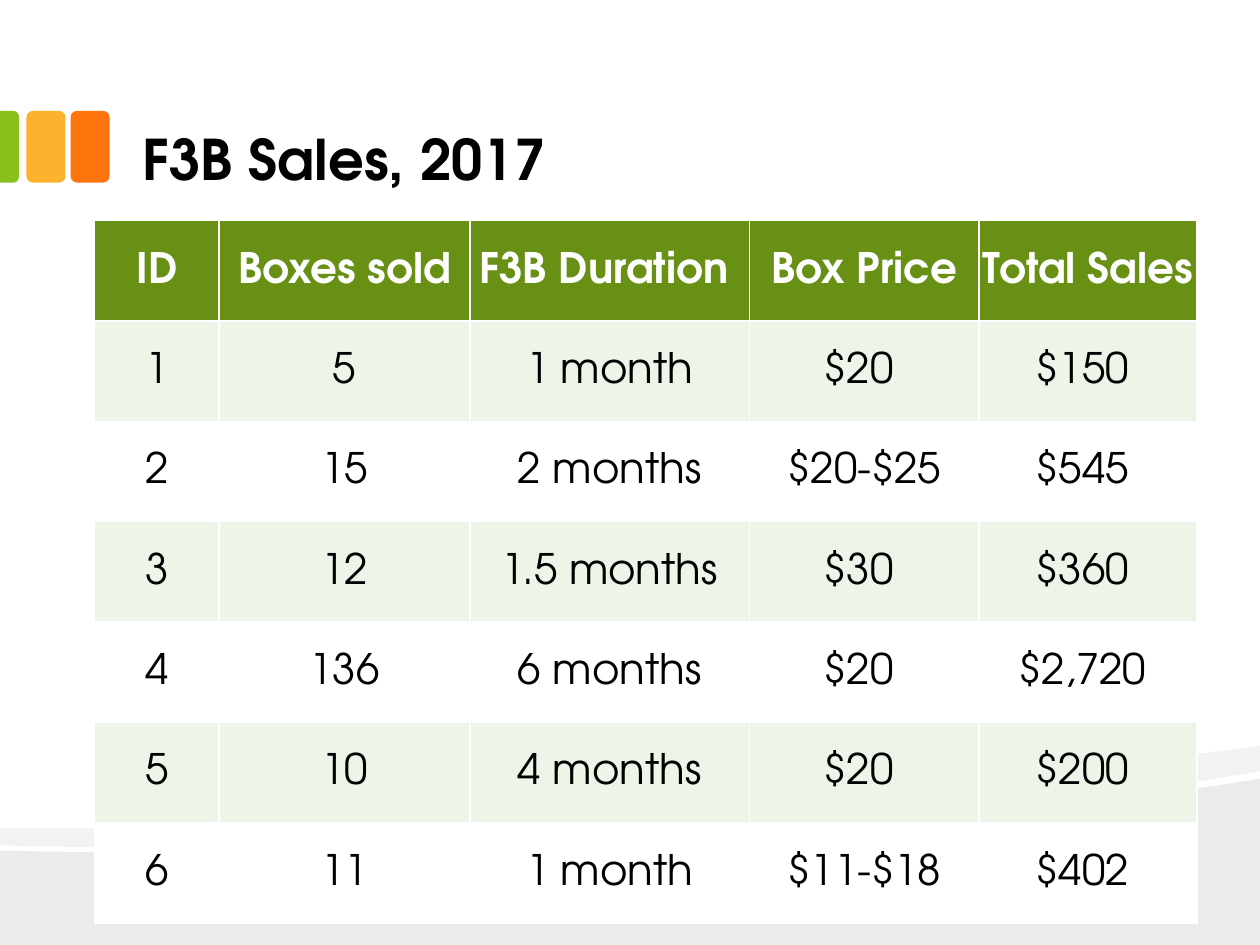
from typing import NamedTuple

from lxml.etree import SubElement
from pptx import Presentation
from pptx.dml.color import RGBColor
from pptx.enum.shapes import MSO_SHAPE as Preset
from pptx.enum.text import MSO_ANCHOR as Anchor, PP_ALIGN as Align
from pptx.oxml.ns import qn
from pptx.util import Emu, Pt

EMU_PER_PX = 9144  # 100 px to the inch
FONT = "TeX Gyre Adventor"
BLACK, WHITE = "000000", "FFFFFF"
HEADER_GREEN, BAND_GREEN = "679015", "EDF4E8"
CURVE_STEPS = 24

Point = tuple[float, float]


class Tab(NamedTuple):
    preset: Preset
    left: int
    top: int
    width: int
    height: int
    color: str
    rotation: int = 0
    adjustments: tuple[float, ...] = ()


class Wave(NamedTuple):
    """Start point, then segments of one point (line) or three (Bezier curve)."""
    start: Point
    segments: list[tuple[Point, ...]]
    opacity: int


class Column(NamedTuple):
    heading: str
    width: int
    values: list[str]


WAVES = [
    Wave((1000, 618), [((1000, 750),), ((0, 750),), ((0, 675),),
                       ((264, 683), (782, 655), (1000, 618))], 8),
    Wave((1000, 592), [((1000, 612),),
                       ((942, 623), (862, 633), (772, 641)),
                       ((523, 663), (193, 677), (0, 671)),
                       ((0, 657),),
                       ((489, 662), (728, 627), (1000, 592))], 5),
]

TABS = [
    Tab(Preset.ROUNDED_RECTANGLE, 56, 88, 31, 57, "FE750E"),
    Tab(Preset.ROUNDED_RECTANGLE, 21, 88, 31, 57, "FCB22C"),
    Tab(Preset.ROUND_2_SAME_RECTANGLE, -21, 109, 57, 15, "89C01C", 90, (0.29, 0)),
]

COLUMNS = [
    Column("ID", 99, ["1", "2", "3", "4", "5", "6"]),
    Column("Boxes sold", 199, ["5", "15", "12", "136", "10", "11"]),
    Column("F3B Duration ", 222, ["1 month", "2 months", "1.5 months",
                                  "6 months", "4 months", "1 month"]),
    Column("Box Price", 182, ["$20 ", "$20-$25", "$30 ", "$20 ", "$20 ", "$11-$18"]),
    Column("Total Sales", 173, ["$150 ", "$545 ", "$360 ", "$2,720 ", "$200 ", "$402 "]),
]


def px(length: float) -> Emu:
    return Emu(round(length * EMU_PER_PX))


def rgb(color: str) -> RGBColor:
    return RGBColor.from_string(color)


def fill_plain(shape, color: str) -> None:
    """Solid fill without outline or shadow."""
    shape.shadow.inherit = False
    shape.fill.solid()
    shape.fill.fore_color.rgb = rgb(color)
    shape.line.fill.background()


def format_text(paragraph, size: int, color: str, bold: bool) -> None:
    for run in paragraph.runs:
        run.font.name = FONT
        run.font.size = Pt(size)
        run.font.bold = bold
        run.font.color.rgb = rgb(color)


def bezier(p0: Point, p1: Point, p2: Point, p3: Point) -> list[Point]:
    points = []
    for step in range(1, CURVE_STEPS + 1):
        t = step / CURVE_STEPS
        weights = ((1 - t) ** 3, 3 * t * (1 - t) ** 2, 3 * t * t * (1 - t), t ** 3)
        points.append(tuple(sum(w * p[axis] for w, p in zip(weights, (p0, p1, p2, p3)))
                            for axis in (0, 1)))
    return points


def draw_wave(slide, wave: Wave) -> None:
    points = [wave.start]
    for segment in wave.segments:
        points += bezier(points[-1], *segment) if len(segment) == 3 else segment
    vertices = [(px(x), px(y)) for x, y in points]
    builder = slide.shapes.build_freeform(*vertices[0])
    builder.add_line_segments(vertices[1:], close=True)
    shape = builder.convert_to_shape()
    fill_plain(shape, BLACK)
    color = shape._element.spPr.find(f"{qn('a:solidFill')}/{qn('a:srgbClr')}")
    SubElement(color, qn("a:alpha"), val=str(wave.opacity * 1000))


def draw_tab(slide, tab: Tab) -> None:
    shape = slide.shapes.add_shape(tab.preset, px(tab.left), px(tab.top),
                                   px(tab.width), px(tab.height))
    fill_plain(shape, tab.color)
    shape.rotation = tab.rotation
    for index, value in enumerate(tab.adjustments):
        shape.adjustments[index] = value


def draw_title(slide, text: str) -> None:
    frame = slide.shapes.add_textbox(px(100), px(17), px(800), px(142)).text_frame
    frame.word_wrap = True
    frame.vertical_anchor = Anchor.BOTTOM
    frame.margin_left = frame.margin_right = px(13)
    frame.margin_top = frame.margin_bottom = px(7)
    frame.text = text
    format_text(frame.paragraphs[0], 32, BLACK, True)


def add_borders(cell, color: str, width: int) -> None:
    properties = cell._tc.get_or_add_tcPr()
    for index, side in enumerate(("a:lnL", "a:lnR", "a:lnT", "a:lnB")):
        line = properties.makeelement(qn(side), {"w": str(Pt(width))})
        fill = SubElement(line, qn("a:solidFill"))
        SubElement(fill, qn("a:srgbClr"), val=color)
        properties.insert(index, line)  # borders precede the fill


def draw_cell(cell, text: str, fill: str, color: str, bold: bool) -> None:
    cell.fill.solid()
    cell.fill.fore_color.rgb = rgb(fill)
    cell.vertical_anchor = Anchor.MIDDLE
    cell.margin_left = cell.margin_right = cell.margin_top = px(1)
    cell.margin_bottom = 0
    cell.text_frame.text = text
    paragraph = cell.text_frame.paragraphs[0]
    paragraph.alignment = Align.CENTER
    format_text(paragraph, 24, color, bold)
    add_borders(cell, WHITE, 1)


def draw_table(slide, columns: list[Column]) -> None:
    row_count = len(columns[0].values) + 1
    table = slide.shapes.add_table(row_count, len(columns), px(75), px(175),
                                   px(875), px(558)).table
    for row in table.rows:
        row.height = px(558 / row_count)
    for column_index, column in enumerate(columns):
        table.columns[column_index].width = px(column.width)
        draw_cell(table.cell(0, column_index), column.heading, HEADER_GREEN, WHITE, True)
        for row_index, value in enumerate(column.values, start=1):
            fill = BAND_GREEN if row_index % 2 else WHITE
            draw_cell(table.cell(row_index, column_index), value, fill, BLACK, False)


def main() -> None:
    presentation = Presentation()
    presentation.slide_width, presentation.slide_height = px(1000), px(750)
    slide = presentation.slides.add_slide(presentation.slide_layouts[6])
    slide.background.fill.solid()
    slide.background.fill.fore_color.rgb = rgb(WHITE)
    for wave in WAVES:
        draw_wave(slide, wave)
    for tab in TABS:
        draw_tab(slide, tab)
    draw_title(slide, "F3B Sales, 2017")
    draw_table(slide, COLUMNS)
    presentation.save("out.pptx")


if __name__ == "__main__":
    main()
